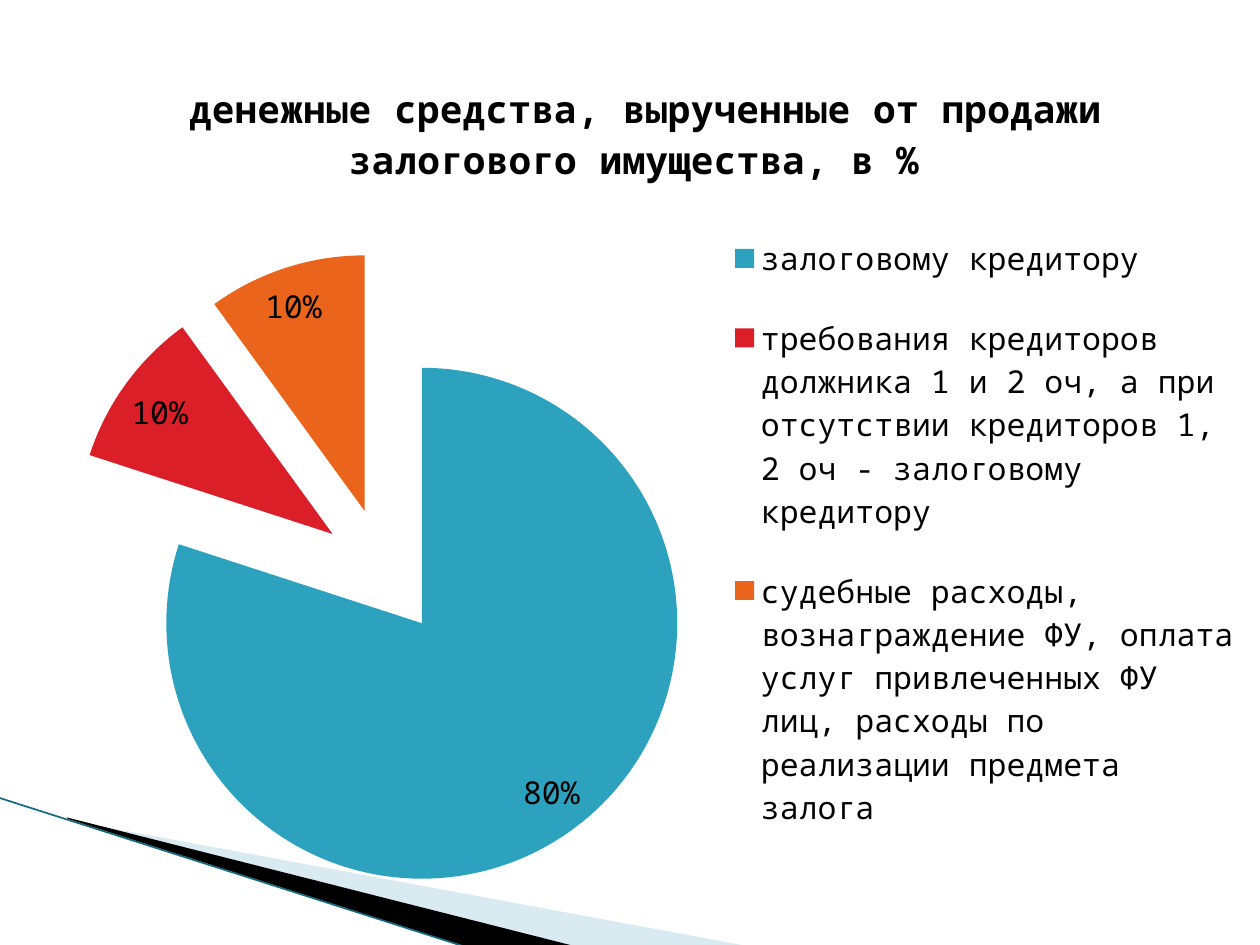
from lxml.etree import SubElement
from pptx import Presentation
from pptx.chart.data import CategoryChartData
from pptx.dml.color import RGBColor
from pptx.enum.chart import XL_CHART_TYPE as ChartType
from pptx.enum.chart import XL_LABEL_POSITION as LabelPosition
from pptx.enum.chart import XL_LEGEND_POSITION as LegendPosition
from pptx.enum.shapes import MSO_CONNECTOR as Connector
from pptx.oxml import parse_xml
from pptx.oxml.ns import nsdecls, qn
from pptx.util import Cm, Pt

BLACK = RGBColor(0x00, 0x00, 0x00)
PALE_BLUE = RGBColor(0xA0, 0xCB, 0xDC)
DARK_TEAL = RGBColor(0x16, 0x6A, 0x7D)
TEAL = RGBColor(0x2D, 0xA2, 0xBF)
RED = RGBColor(0xDA, 0x1F, 0x28)
ORANGE = RGBColor(0xEB, 0x64, 0x1B)

TITLE = "денежные средства, вырученные от продажи залогового имущества, в % "
SHARES = [
    ("залоговому кредитору", 80, TEAL),
    ("требования кредиторов должника 1 и 2 оч, а при отсутствии кредиторов 1, 2 оч - залоговому кредитору ", 10, RED),
    ("судебные расходы, вознаграждение ФУ, оплата услуг привлеченных ФУ лиц, расходы по реализации предмета залога", 10, ORANGE),
]


class SlideBuilder:
    """Draw styled elements on the current slide."""

    font_name = "Noto Sans Mono"

    def __init__(self, page):
        self.page = page

    def style_font(self, font, size, bold=False):
        font.name, font.size, font.bold = self.font_name, Pt(size), bold
        font.color.rgb = BLACK

    def wedge(self, points, color, opacity=100):
        corners = [(Cm(x), Cm(y)) for x, y in points]
        builder = self.page.shapes.build_freeform(*corners[0])
        builder.add_line_segments(corners[1:], close=True)
        shape = builder.convert_to_shape()
        shape.shadow.inherit = False
        shape.fill.solid()
        shape.fill.fore_color.rgb = color
        shape.line.fill.background()
        if opacity < 100:
            tint = shape._element.spPr.find(".//" + qn("a:srgbClr"))
            SubElement(tint, qn("a:alpha"), val=str(opacity * 1000))

    def line(self, start, end, color, width):
        ends = [Cm(value) for value in (*start, *end)]
        line = self.page.shapes.add_connector(Connector.STRAIGHT, *ends)
        line.line.color.rgb = color
        line.line.width = Pt(width)
        SubElement(line._element.spPr, qn("a:effectLst"))

    def place(self, element, index, inner=False, **fractions):
        for old in element.findall(qn("c:layout")):
            element.remove(old)
        target = '<c:layoutTarget val="inner"/>' if inner else ""
        modes = "".join(f'<c:{key}Mode val="edge"/>' for key in fractions if key in "xy")
        values = "".join(f'<c:{key} val="{value}"/>' for key, value in fractions.items())
        element.insert(index, parse_xml(
            f'<c:layout {nsdecls("c")}><c:manualLayout>{target}{modes}{values}'
            "</c:manualLayout></c:layout>"))

    def pie(self, left, top, width, height, title, shares, explosion):
        data = CategoryChartData()
        data.categories = [name for name, _, _ in shares]
        data.add_series(title, [value for _, value, _ in shares])
        chart = self.page.shapes.add_chart(
            ChartType.PIE, Cm(left), Cm(top), Cm(width), Cm(height), data).chart
        self.style_font(chart.font, 18)

        chart.has_title = True
        para = chart.chart_title.text_frame.paragraphs[0]
        para.text = title
        self.style_font(para.font, 21.6, bold=True)
        self.place(chart.chart_title._element, 1, x=0.12, y=0.03)

        chart.has_legend = True
        chart.legend.position = LegendPosition.RIGHT
        chart.legend.include_in_layout = False
        self.style_font(chart.legend.font, 18)
        self.place(chart.legend._element, 1, x=0.57, y=0.18, w=0.41, h=0.77)

        plot = chart.plots[0]
        plot.vary_by_categories = True
        self.place(plot._element.getparent(), 0, inner=True, x=0.02, y=0.24, w=0.53, h=0.74)
        series = plot.series[0]
        series._element.find(qn("c:tx")).addnext(
            parse_xml(f'<c:explosion {nsdecls("c")} val="{explosion}"/>'))
        for index, (_, _, color) in enumerate(shares):
            fill = series.points[index].format.fill
            fill.solid()
            fill.fore_color.rgb = color

        plot.has_data_labels = True
        labels = plot.data_labels
        labels.show_percentage = True
        labels.show_value = False
        labels.number_format, labels.number_format_is_linked = "0%", False
        labels.position = LabelPosition.BEST_FIT
        self.style_font(labels.font, 18)


def main():
    deck = Presentation()
    deck.slide_width, deck.slide_height = Cm(25.4), Cm(19.05)
    builder = SlideBuilder(deck.slides.add_slide(deck.slide_layouts[6]))
    builder.wedge([(1.4, 16.54), (15.11, 19.08), (11.58, 19.08), (1.4, 16.51)], PALE_BLUE, 40)
    builder.wedge([(1.35, 16.48), (11.61, 19.08), (9.45, 19.1), (1.37, 16.51)], BLACK)
    builder.line((-0.03, 16.08), (9.42, 19.1), DARK_TEAL, 0.95)
    builder.pie(0.71, 0.91, 24.69, 17.4, TITLE, SHARES, explosion=25)
    deck.save("out.pptx")


if __name__ == "__main__":
    main()
